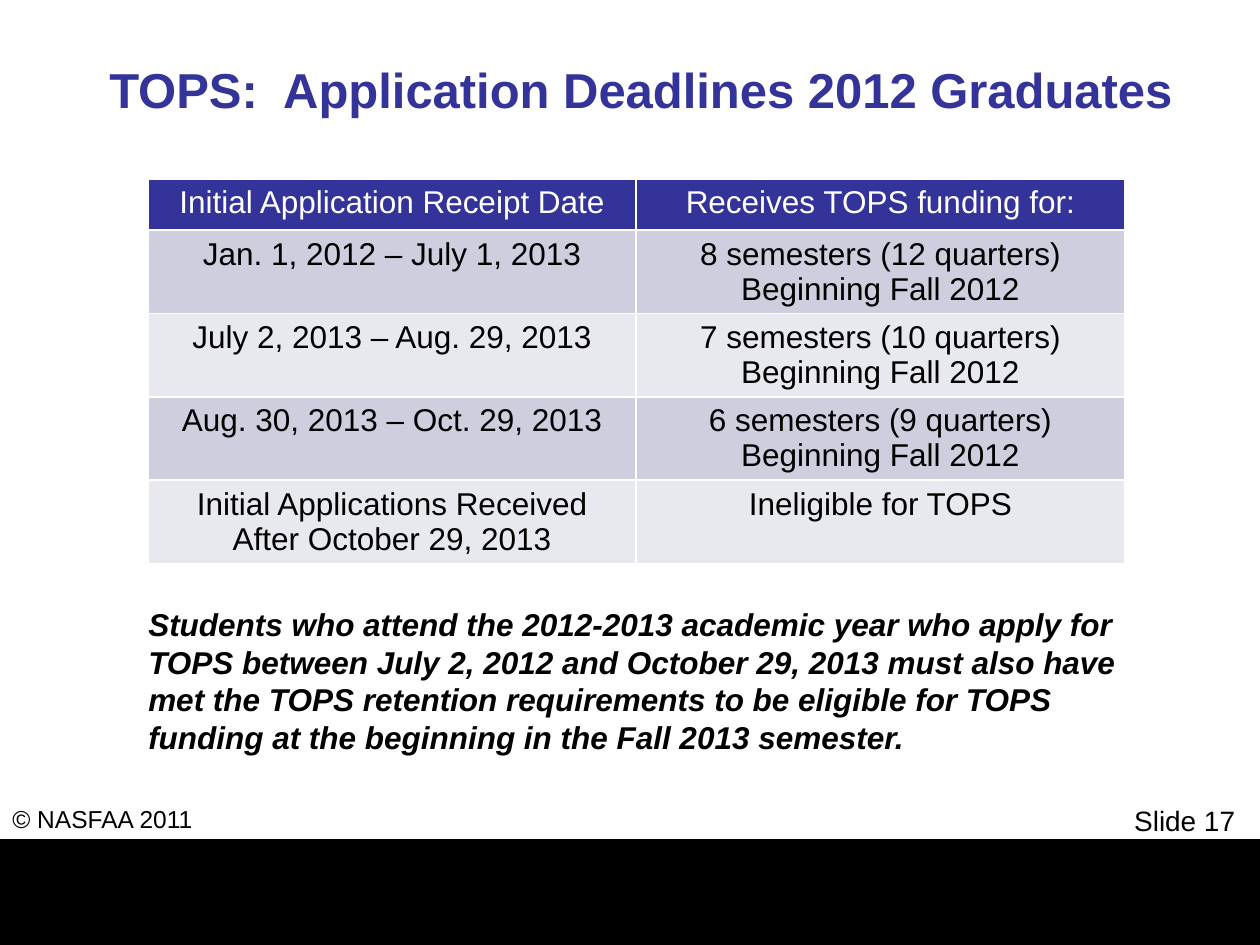
from dataclasses import dataclass, field

from lxml import etree
from pptx import Presentation
from pptx import util as u
from pptx.dml.color import RGBColor
from pptx.enum import shapes, text
from pptx.oxml import ns

BLACK = RGBColor(0x00, 0x00, 0x00)
WHITE = RGBColor(0xFF, 0xFF, 0xFF)
NAVY = RGBColor(0x33, 0x33, 0x99)
LILAC = RGBColor(0xCE, 0xCE, 0xDE)
MIST = RGBColor(0xE8, 0xE8, 0xEF)

LEFT = text.PP_ALIGN.LEFT
RIGHT = text.PP_ALIGN.RIGHT
MID = text.PP_ALIGN.CENTER

ROWS = (
    ("Initial Application Receipt Date", "Receives TOPS funding for:"),
    ("Jan. 1, 2012 – July 1, 2013", "8 semesters (12 quarters)\nBeginning Fall 2012"),
    ("July 2, 2013 – Aug. 29, 2013", "7 semesters (10 quarters)\nBeginning Fall 2012"),
    ("Aug. 30, 2013 – Oct. 29, 2013", "6 semesters (9 quarters)\nBeginning Fall 2012"),
    ("Initial Applications Received After October 29, 2013", "Ineligible for TOPS"),
)


@dataclass
class Label:
    words: str
    left: float
    top: float
    width: float
    height: float
    size: int
    align: text.PP_ALIGN = LEFT
    tint: RGBColor = BLACK
    font: dict = field(default_factory=dict)
    frame: dict = field(default_factory=dict)


LABELS = (
    Label("Slide 17", 17.78, 16.08, 7.62, 0.64, 16, RIGHT,
          frame={"margin_right": u.Cm(0.5)}),
    Label("© NASFAA 2011", 0, 16.08, 4.65, 0.84, 14),
    Label("TOPS:  Application Deadlines 2012 Graduates", 1.07, 0.43, 23.7, 2.74,
          28, MID, NAVY, {"bold": True},
          {"vertical_anchor": text.MSO_ANCHOR.MIDDLE}),
    Label("Students who attend the 2012-2013 academic year who apply for TOPS "
          "between July 2, 2012 and October 29, 2013 must also have met the TOPS "
          "retention requirements to be eligible for TOPS funding at the beginning "
          "in the Fall 2013 semester.", 2.74, 12.07, 20.32, 3.33, 18,
          font={"bold": True, "italic": True}),
)


def apply(target: object, values: dict) -> None:
    for name, value in values.items():
        setattr(target, name, value)


def write(frame: object, words: str, align: text.PP_ALIGN, size: int,
          tint: RGBColor, font: dict) -> None:
    frame.text = words
    for para in frame.paragraphs:
        para.alignment = align
        for run in para.runs:
            apply(run.font, {"name": "Arial", "size": u.Pt(size), **font})
            run.font.color.rgb = tint


def add_label(slide: object, label: Label) -> None:
    spot = map(u.Cm, (label.left, label.top, label.width, label.height))
    frame = slide.shapes.add_textbox(*spot).text_frame
    apply(frame, {"word_wrap": True, **label.frame})
    write(frame, label.words, label.align, label.size, label.tint, label.font)


def add_band(slide: object) -> None:
    band = slide.shapes.add_shape(shapes.MSO_SHAPE.RECTANGLE, 0, u.Cm(16.93),
                                  u.Cm(25.4), u.Cm(2.12))
    band.shadow.inherit = False
    band.fill.solid()
    band.fill.fore_color.rgb = BLACK
    band.line.color.rgb = BLACK
    band.line.width = u.Pt(0.75)


def add_edges(cell: object) -> None:
    props = cell._tc.get_or_add_tcPr()
    for side in ("lnL", "lnR", "lnT", "lnB"):
        line = etree.SubElement(props, ns.qn(f"a:{side}"), w=str(u.Pt(1)))
        fill = etree.SubElement(line, ns.qn("a:solidFill"))
        etree.SubElement(fill, ns.qn("a:srgbClr"), val=str(WHITE))


def add_grid(slide: object) -> None:
    head, body = u.Cm(1.03), u.Cm(1.68)
    tall = head + body * (len(ROWS) - 1)
    grid = slide.shapes.add_table(len(ROWS), 2, u.Cm(2.98), u.Cm(3.61),
                                  u.Cm(19.69), tall).table
    for row, words in enumerate(ROWS):
        grid.rows[row].height = body if row else head
        tint = BLACK if row else WHITE
        fill = (LILAC if row % 2 else MIST) if row else NAVY
        for cell, word in zip(grid.rows[row].cells, words):
            add_edges(cell)
            cell.fill.solid()
            cell.fill.fore_color.rgb = fill
            write(cell.text_frame, word, MID, 18, tint, {"bold": False})


def main() -> None:
    deck = Presentation()
    apply(deck, {"slide_width": u.Cm(25.4), "slide_height": u.Cm(19.05)})
    slide = deck.slides.add_slide(deck.slide_layouts[6])
    add_band(slide)
    add_grid(slide)
    for label in LABELS:
        add_label(slide, label)
    deck.save("out.pptx")


if __name__ == "__main__":
    main()
